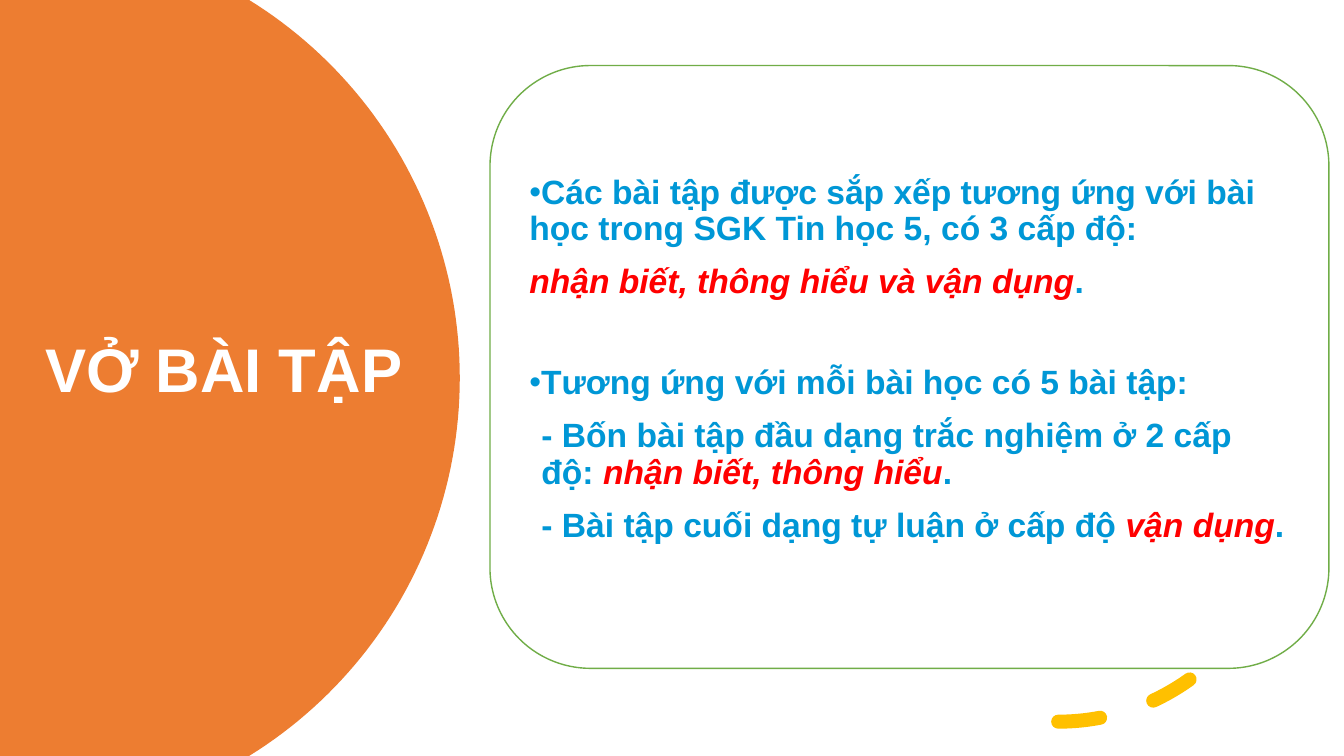
from dataclasses import dataclass
from math import asin, cos, sin

from lxml.etree import SubElement
from pptx import Presentation
from pptx.dml.color import RGBColor
from pptx.enum.dml import MSO_LINE
from pptx.enum.shapes import MSO_SHAPE
from pptx.enum.text import MSO_ANCHOR, PP_ALIGN
from pptx.oxml.ns import qn
from pptx.util import Inches, Pt


@dataclass(frozen=True)
class Theme:
    font: str = "Arial"
    title_size: int = 44
    body_size: int = 24
    white: str = "FFFFFF"
    orange: str = "ED7D31"
    green: str = "70AD47"
    yellow: str = "FFC000"
    blue: str = "0097D6"
    red: str = "FF0000"


@dataclass(frozen=True)
class Item:
    text: str
    emphasis: str = ""
    ending: str = ""
    bullet: bool = False
    level: int = 0
    space_before: int = 6


class SlideBuilder:
    """Draws themed elements placed in percent of the slide's width and height."""

    def __init__(self, presentation, theme):
        self.theme = theme
        self.column = presentation.slide_width / 100
        self.row = presentation.slide_height / 100
        self.slide = presentation.slides.add_slide(presentation.slide_layouts[6])
        self.shapes = self.slide.shapes
        self.paint(self.slide.background.fill, theme.white)

    def paint(self, fill, color):
        fill.solid()
        fill.fore_color.rgb = RGBColor.from_string(color)

    def place(self, left, top, width, height):
        return (round(left * self.column), round(top * self.row),
                round(width * self.column), round(height * self.row))

    def style_font(self, font, size, color):
        font.name = self.theme.font
        font.size = Pt(size)
        font.bold = True
        font.color.rgb = RGBColor.from_string(color)

    def circle_segment(self, center, radius, color, steps=90):
        middle = 50 * self.row
        reach = radius * self.column
        limit = asin(middle / reach)
        angles = [limit * (2 * step / steps - 1) for step in range(steps + 1)]
        edge = [(round(center * self.column + reach * cos(angle)),
                 round(middle + reach * sin(angle))) for angle in angles]
        builder = self.shapes.build_freeform(0, 0)
        builder.add_line_segments(edge + [(0, round(2 * middle))], close=True)
        shape = builder.convert_to_shape()
        shape.shadow.inherit = False
        self.paint(shape.fill, color)
        shape.line.fill.background()

    def title(self, box, text):
        frame = self.shapes.add_textbox(*self.place(*box)).text_frame
        frame.word_wrap = True
        frame.vertical_anchor = MSO_ANCHOR.MIDDLE
        paragraph = frame.paragraphs[0]
        paragraph.text = text
        paragraph.line_spacing = 0.9
        self.style_font(paragraph.font, self.theme.title_size, self.theme.white)

    def dashed_arc(self, box, color, width):
        shape = self.shapes.add_shape(MSO_SHAPE.ARC, *self.place(*box))
        shape.shadow.inherit = False
        shape.fill.background()
        self.paint(shape.line.fill, color)
        shape.line.width = Pt(width)
        shape.line.dash_style = MSO_LINE.DASH
        properties = shape.element.spPr
        properties.find(qn("a:xfrm")).set("flipV", "1")
        properties.find(qn("a:ln")).set("cap", "rnd")

    def card(self, box, items):
        shape = self.shapes.add_shape(MSO_SHAPE.ROUNDED_RECTANGLE, *self.place(*box))
        shape.shadow.inherit = False
        self.paint(shape.fill, self.theme.white)
        self.paint(shape.line.fill, self.theme.green)
        shape.line.width = Pt(1)
        frame = shape.text_frame
        frame.word_wrap = True
        frame.vertical_anchor = MSO_ANCHOR.MIDDLE
        frame.margin_bottom = round(2.5 * self.row)
        for index, item in enumerate(items):
            paragraph = frame.add_paragraph() if index else frame.paragraphs[0]
            self.item(paragraph, item, item.space_before if index else 0)

    def item(self, paragraph, item, space_before):
        paragraph.alignment = PP_ALIGN.LEFT
        paragraph.level = item.level
        paragraph.line_spacing = 0.9
        paragraph.space_before = Pt(space_before)
        paragraph.space_after = Pt(6)
        properties = paragraph._p.get_or_add_pPr()
        properties.set("marL", str(Inches(0.12 * item.level)))
        properties.set("indent", str(Inches(-0.25 if item.bullet else 0)))
        if item.bullet:
            SubElement(properties, qn("a:buFont")).set("typeface", self.theme.font)
            SubElement(properties, qn("a:buChar")).set("char", "•")
        else:
            SubElement(properties, qn("a:buNone"))
        self.style_font(paragraph.font, self.theme.body_size, self.theme.blue)
        for text in filter(None, (item.text, item.emphasis, item.ending)):
            run = paragraph.add_run()
            run.text = text
            if text == item.emphasis:
                run.font.italic = True
                run.font.color.rgb = RGBColor.from_string(self.theme.red)


def main():
    presentation = Presentation()
    presentation.slide_width = Inches(13.33)
    presentation.slide_height = Inches(7.5)
    theme = Theme()
    builder = SlideBuilder(presentation, theme)
    builder.circle_segment(center=1.13, radius=33.08, color=theme.orange)
    builder.title((2.63, 16.8, 29.26, 65.07), "VỞ BÀI TẬP")
    builder.dashed_arc((61.97, 35.87, 33.53, 59.6), theme.yellow, 10)
    builder.card((36.46, 8.67, 62.42, 79.73), [
        Item("Các bài tập được sắp xếp tương ứng với bài học trong SGK Tin học 5, "
             "có 3 cấp độ:", bullet=True),
        Item("", "nhận biết, thông hiểu và vận dụng", "."),
        Item("Tương ứng với mỗi bài học có 5 bài tập:", bullet=True, space_before=40),
        Item("- Bốn bài tập đầu dạng trắc nghiệm ở 2 cấp độ: ",
             "nhận biết, thông hiểu", ".", level=1),
        Item("- Bài tập cuối dạng tự luận ở cấp độ ", "vận dụng", ".", level=1),
    ])
    presentation.save("out.pptx")


if __name__ == "__main__":
    main()
